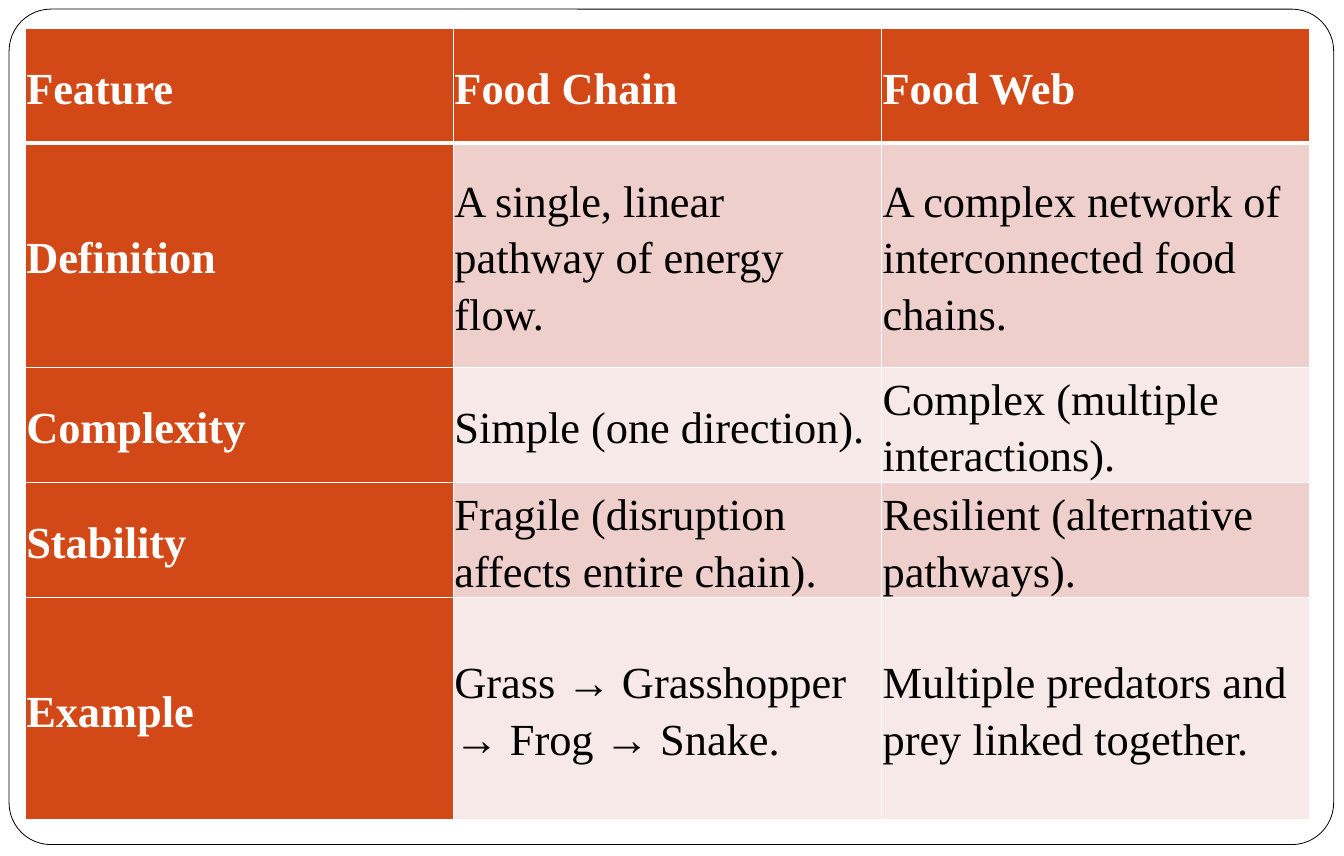
"""Build a slide with a table that compares food chains and food webs."""
from dataclasses import dataclass

import lxml.etree
import pptx
import pptx.dml.color
import pptx.enum.shapes
import pptx.enum.text
import pptx.oxml.ns
import pptx.util

Inches = pptx.util.Inches


@dataclass(frozen=True)
class Theme:
    font: str = "Times New Roman"
    size: int = 28
    accent: str = "D34817"
    bands: tuple = ("EFCFCC", "F7E9E8")
    light: str = "FFFFFF"
    dark: str = "000000"


theme = Theme()


def color(value):
    return pptx.dml.color.RGBColor.from_string(value)


def write_cell(cell, text, *, fill, ink, bold, borders):
    cell.vertical_anchor = pptx.enum.text.MSO_ANCHOR.MIDDLE
    cell.margin_left = cell.margin_right = Inches(0.01)
    cell.margin_top = cell.margin_bottom = Inches(0.01)
    para = cell.text_frame.paragraphs[0]
    para.line_spacing = 1.15
    para.space_after = pptx.util.Pt(8)
    span = para.add_run()
    span.text = text
    span.font.name = theme.font
    span.font.size = pptx.util.Pt(theme.size)
    span.font.bold = bold
    span.font.color.rgb = color(ink)
    cell.fill.solid()
    cell.fill.fore_color.rgb = color(fill)
    properties = cell._tc.get_or_add_tcPr()
    qn = pptx.oxml.ns.qn
    for position, (side, points) in enumerate(borders.items()):
        line = lxml.etree.Element(qn(f"a:ln{side}"), w=str(pptx.util.Pt(points)))
        solid = lxml.etree.SubElement(line, qn("a:solidFill"))
        lxml.etree.SubElement(solid, qn("a:srgbClr"), val=theme.light)
        properties.insert(position, line)


deck = pptx.Presentation()
deck.slide_width = Inches(11.77)
deck.slide_height = Inches(7.5)
page = deck.slides.add_slide(deck.slide_layouts[6])
page.background.fill.solid()
page.background.fill.fore_color.rgb = color(theme.light)

frame = page.shapes.add_shape(
    pptx.enum.shapes.MSO_SHAPE.ROUNDED_RECTANGLE,
    Inches(0.08), Inches(0.08), Inches(11.6), Inches(7.32),
)
frame.adjustments[0] = 0.05
frame.shadow.inherit = False
frame.fill.solid()
frame.fill.fore_color.rgb = color(theme.light)
frame.line.color.rgb = color(theme.dark)
frame.line.width = pptx.util.Pt(0.5)

comparison = [
    ("Feature", "Food Chain", "Food Web"),
    ("Definition", "A single, linear pathway of energy flow.",
     "A complex network of interconnected food chains."),
    ("Complexity", "Simple (one direction).", "Complex (multiple interactions)."),
    ("Stability", "Fragile (disruption affects entire chain).",
     "Resilient (alternative pathways)."),
    ("Example", "Grass → Grasshopper → Frog → Snake.",
     "Multiple predators and prey linked together."),
]
row_heights = [1, 1.97, 1, 1, 1.94]
column_width = 3.75

table = page.shapes.add_table(
    len(comparison), len(comparison[0]), Inches(0.22), Inches(0.25),
    Inches(column_width * len(comparison[0])), Inches(sum(row_heights)),
).table
table.first_col = True
for column in table.columns:
    column.width = Inches(column_width)

for row, (texts, height) in enumerate(zip(comparison, row_heights)):
    table.rows[row].height = Inches(height)
    borders = {"L": 1, "R": 1, "T": 3 if row == 1 else 1, "B": 3 if row == 0 else 1}
    for column, text in enumerate(texts):
        heading = row == 0 or column == 0
        write_cell(
            table.cell(row, column), text,
            fill=theme.accent if heading else theme.bands[(row - 1) % 2],
            ink=theme.light if heading else theme.dark,
            bold=heading,
            borders=borders,
        )

deck.save("out.pptx")
